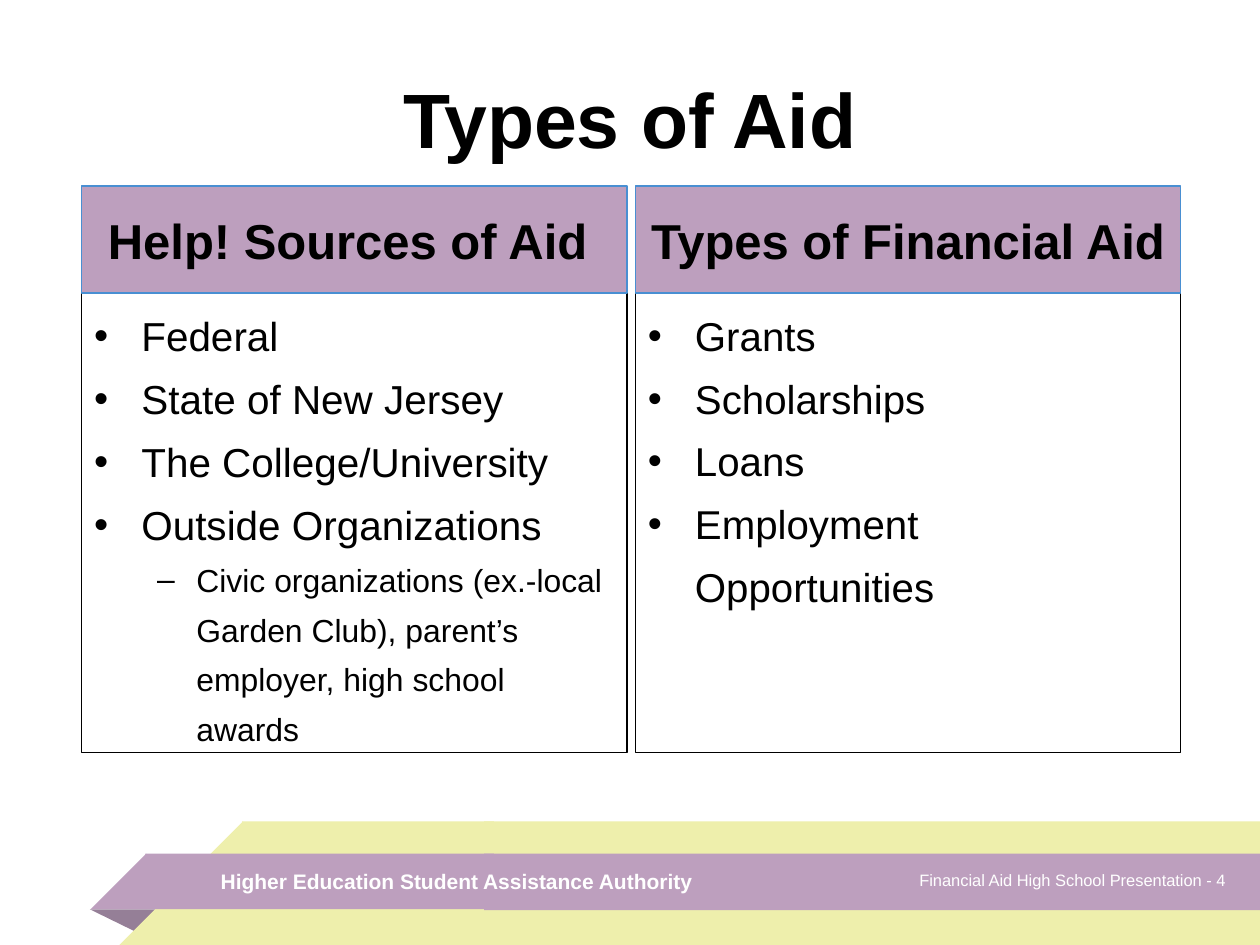
from lxml import etree
from pptx import Presentation
from pptx.dml.color import RGBColor
from pptx.enum.shapes import MSO_SHAPE as SHAPE
from pptx.enum.text import MSO_ANCHOR as ANCHOR, PP_ALIGN as ALIGN
from pptx.oxml.ns import qn
from pptx.util import Cm, Pt

BLACK = RGBColor(0x00, 0x00, 0x00)
WHITE = RGBColor(0xFF, 0xFF, 0xFF)
YELLOW = RGBColor(0xEE, 0xEF, 0xAC)
MAUVE = RGBColor(0xBD, 0x9F, 0xBE)
DARK_MAUVE = RGBColor(0x95, 0x7F, 0x97)
BLUE = RGBColor(0x49, 0x8F, 0xD2)

BODY_TOP, BODY_HEIGHT = 5.86, 9.31
HEADER_TOP, HEADER_HEIGHT = 3.75, 2.16
COLUMN_WIDTH = 10.99

# Per level: left indent and hanging indent in cm, bullet
LEVELS = [(0.95, 0.95, "•"), (2.06, 0.79, "–")]

COLUMNS = [
    (12.81, "Types of Financial Aid", (23, 18),
     [("Grants", 0), ("Scholarships", 0), ("Loans", 0),
      ("Employment Opportunities", 0)]),
    (1.65, "Help! Sources of Aid ", (23.1, 18.2),
     [("Federal", 0), ("State of New Jersey", 0),
      ("The College/University", 0), ("Outside Organizations", 0),
      ("Civic organizations (ex.-local Garden Club), parent’s employer, "
       "high school awards", 1)]),
]


def add_block(s, preset, box, fill=None, line=None):
    sp = s.shapes.add_shape(preset, *(Cm(v) for v in box))
    sp.shadow.inherit = False
    if fill is None:
        sp.fill.background()
    else:
        sp.fill.solid()
        sp.fill.fore_color.rgb = fill
    if line is None:
        sp.line.fill.background()
    else:
        sp.line.color.rgb = line
        sp.line.width = Pt(0.75)
    return sp


def style_paragraph(p, size, color, bold=False, align=ALIGN.LEFT):
    p.alignment = align
    for r in p.runs:
        r.font.name = "Arial"
        r.font.size = Pt(size)
        r.font.bold = bold
        r.font.color.rgb = color


def set_line(sp, text, size, color, bold=False, align=ALIGN.LEFT):
    tf = sp.text_frame
    tf.word_wrap = True
    tf.vertical_anchor = ANCHOR.MIDDLE
    tf.text = text
    style_paragraph(tf.paragraphs[0], size, color, bold, align)


def add_label(s, box, *style):
    set_line(s.shapes.add_textbox(*(Cm(v) for v in box)), *style)


def set_bullet(p, level):
    left, hanging, char = LEVELS[level]
    p.level = level
    pPr = p._p.get_or_add_pPr()
    pPr.set("marL", str(Cm(left)))
    pPr.set("indent", str(-Cm(hanging)))
    etree.SubElement(pPr, qn("a:buFont")).set("typeface", "Arial")
    etree.SubElement(pPr, qn("a:buChar")).set("char", char)


def add_ribbon(s, left, top, height, color, split, tail_height):
    """Band with a slanted left end, running off the right edge."""
    slope = add_block(s, SHAPE.RIGHT_TRIANGLE, (left, top, height, height), color)
    slope._element.spPr.find(qn("a:xfrm")).set("flipH", "1")
    start = left + height - 0.02
    add_block(s, SHAPE.RECTANGLE, (start, top, split - start, height), color)
    tail_left = split - 0.2
    add_block(s, SHAPE.RECTANGLE,
              (tail_left, top, 25.4 - tail_left, tail_height), color)


def add_footer(s):
    # Fold, behind both ribbons
    fold = add_block(s, SHAPE.ISOSCELES_TRIANGLE,
                     (1.81, 18.33, 1.45, 0.48), DARK_MAUVE)
    fold.adjustments[0] = 0.324
    fold.rotation = 180

    # Ribbons and their labels
    add_ribbon(s, 2.41, 16.56, 2.49, YELLOW, 9.96, 2.49)
    add_ribbon(s, 1.83, 17.21, 1.12, MAUVE, 9.96, 1.14)
    add_label(s, (4.2, 17.25, 10.97, 1.02),
              "Higher Education Student Assistance Authority", 12, WHITE, True)
    add_label(s, (17.33, 17.23, 7.62, 1.02),
              "Financial Aid High School Presentation - 4",
              9.4, WHITE, False, ALIGN.RIGHT)


def add_column(s, left, heading, sizes, items):
    # Bulleted list
    body = add_block(s, SHAPE.RECTANGLE,
                     (left, BODY_TOP, COLUMN_WIDTH, BODY_HEIGHT), line=BLACK)
    tf = body.text_frame
    tf.word_wrap = True
    tf.vertical_anchor = ANCHOR.TOP
    tf.text = "\n".join(text for text, _ in items)
    for p, (_, level) in zip(tf.paragraphs, items):
        style_paragraph(p, sizes[level], BLACK)
        p.line_spacing = 1.3
        set_bullet(p, level)

    # Heading
    header = add_block(s, SHAPE.RECTANGLE,
                       (left, HEADER_TOP, COLUMN_WIDTH, HEADER_HEIGHT),
                       MAUVE, BLUE)
    set_line(header, heading, 28, BLACK, True, ALIGN.CENTER)


def main():
    prs = Presentation()
    prs.slide_width, prs.slide_height = Cm(25.4), Cm(19.05)
    s = prs.slides.add_slide(prs.slide_layouts[6])
    add_footer(s)
    for column in COLUMNS:
        add_column(s, *column)
    add_label(s, (1.27, 0.79, 22.86, 3.18),
              "Types of Aid", 44, BLACK, True, ALIGN.CENTER)
    prs.save("out.pptx")


if __name__ == "__main__":
    main()
